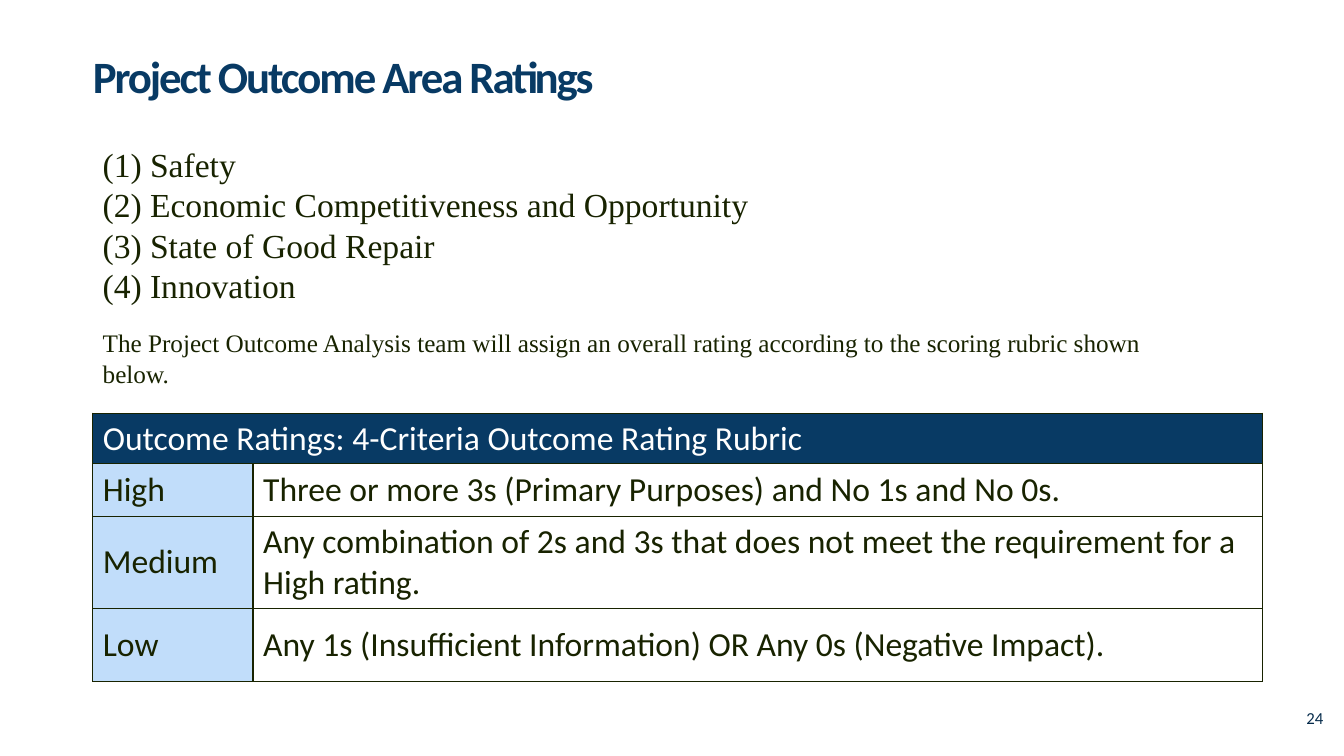
"""Build the project outcome area ratings slide."""
import pptx
import pptx.util
import pptx.dml.color
import pptx.enum.text
import pptx.oxml
import pptx.oxml.ns
from lxml import etree

Inches, Pt = pptx.util.Inches, pptx.util.Pt
MIDDLE = pptx.enum.text.MSO_ANCHOR.MIDDLE
COLORS = {"navy": "083A64", "number": "062B4B", "ink": "182300",
          "pale": "C1DDFA", "white": "FFFFFF"}
A = pptx.oxml.ns.nsdecls("a")


def rgb(name):
    return pptx.dml.color.RGBColor.from_string(COLORS[name])


def style(p, size, color, font="Calibri", bold=False):
    for r in p.runs:
        r.font.size = Pt(size)
        r.font.name = font
        r.font.bold = bold
        r.font.color.rgb = rgb(color)


prs = pptx.Presentation()
prs.slide_width, prs.slide_height = Inches(13.33), Inches(7.5)
s = prs.slides.add_slide(prs.slide_layouts[5])

title = s.shapes.title
title.left, title.top = Inches(0.92), Inches(0.53)
title.width, title.height = Inches(9.95), Inches(0.51)
tf = title.text_frame
tf.text = "Project Outcome Area Ratings"
tf.auto_size = pptx.enum.text.MSO_AUTO_SIZE.NONE
tf.vertical_anchor = MIDDLE
tf.margin_left = tf.margin_right = tf.margin_top = tf.margin_bottom = 0
p = tf.paragraphs[0]
p.alignment = pptx.enum.text.PP_ALIGN.LEFT
p.line_spacing = 0.9
style(p, 32, "navy", bold=True)
p.runs[0].font._element.set("spc", "-150")

number = s.shapes.add_textbox(Inches(12.86), Inches(6.97), Inches(0.47), Inches(0.47))
number.text_frame.text = "24"
style(number.text_frame.paragraphs[0], 12, "number")

rubric = [
    ("Outcome Ratings: 4-Criteria Outcome Rating Rubric", ""),
    ("High", "Three or more 3s (Primary Purposes) and No 1s and No 0s."),
    ("Medium", "Any combination of 2s and 3s that does not meet the requirement for a High rating."),
    ("Low", "Any 1s (Insufficient Information) OR Any 0s (Negative Impact)."),
]
heights = [0.5, 0.52, 0.92, 0.72]
table = s.shapes.add_table(len(rubric), 2, Inches(0.92), Inches(4.1),
                           Inches(11.6), Inches(sum(heights))).table
table.first_row = table.horz_banding = False
table.columns[0].width, table.columns[1].width = Inches(1.59), Inches(10.01)
for i, (row, height) in enumerate(zip(rubric, heights)):
    table.rows[i].height = Inches(height)
    for j, text in enumerate(row):
        cell = table.cell(i, j)
        cell.text = text
        cell.vertical_anchor = MIDDLE
        style(cell.text_frame.paragraphs[0], 24, "ink" if i else "white")
        tcPr = cell._tc.get_or_add_tcPr()
        for side in ("lnL", "lnR", "lnT", "lnB"):
            tcPr.append(etree.fromstring(
                f'<a:{side} {A} w="12700"><a:solidFill><a:srgbClr val="{COLORS["ink"]}"/>'
                f'</a:solidFill></a:{side}>'))
        if i and j:
            cell.fill.background()
        else:
            cell.fill.solid()
            cell.fill.fore_color.rgb = rgb("pale" if i else "navy")
table.cell(0, 0).merge(table.cell(0, 1))

body = s.shapes.add_textbox(Inches(0.92), Inches(1.38), Inches(11.18), Inches(2.56))
tf = body.text_frame
tf.word_wrap = True
areas = ["Safety", "Economic Competitiveness and Opportunity", "State of Good Repair", "Innovation"]
for i, area in enumerate(areas):
    p = tf.paragraphs[0] if i == 0 else tf.add_paragraph()
    p.text = area
    p.line_spacing = Pt(28.8)
    pPr = p._p.get_or_add_pPr()
    pPr.set("marL", str(Inches(0.47)))
    pPr.set("indent", str(-Inches(0.47)))
    pPr.append(etree.fromstring(f'<a:buFont {A} typeface="Times New Roman"/>'))
    pPr.append(etree.fromstring(f'<a:buAutoNum {A} type="arabicParenBoth"/>'))
    style(p, 24, "ink", "Times New Roman")
p = tf.add_paragraph()
p.text = ("The Project Outcome Analysis team will assign an overall rating "
          "according to the scoring rubric shown below.")
p.line_spacing = Pt(21.6)
p.space_before = Pt(16)
style(p, 18, "ink", "Times New Roman")

prs.save("out.pptx")
